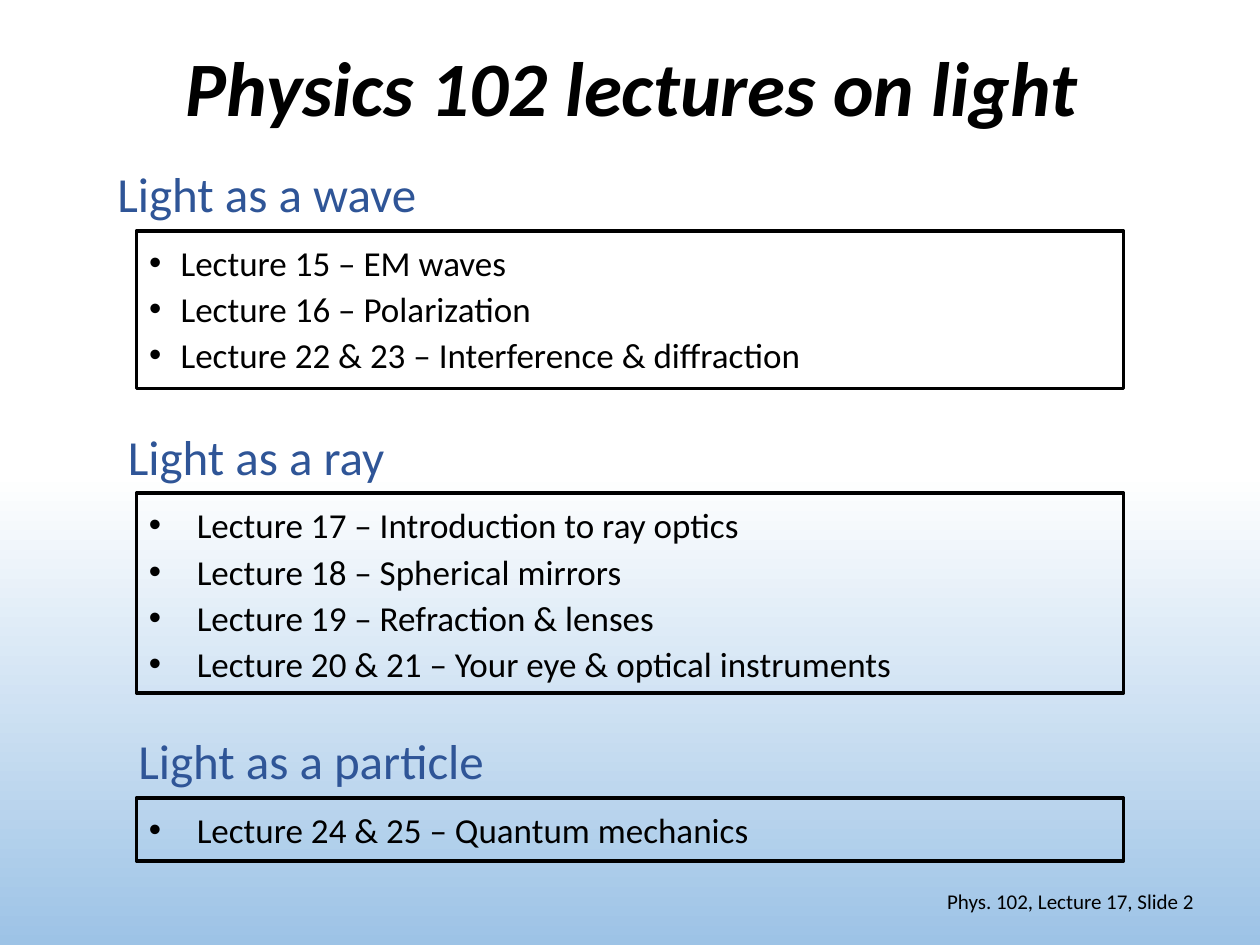
from dataclasses import dataclass

from lxml.etree import SubElement
from pptx import Presentation
from pptx.dml.color import RGBColor
from pptx.enum.shapes import MSO_SHAPE
from pptx.enum.text import MSO_ANCHOR, MSO_AUTO_SIZE, PP_ALIGN
from pptx.oxml.ns import qn
from pptx.util import Inches, Pt

BLACK = RGBColor(0x00, 0x00, 0x00)
WHITE = RGBColor(0xFF, 0xFF, 0xFF)
SKY = RGBColor(0x9D, 0xC3, 0xE6)
HEADING_BLUE = RGBColor(0x2F, 0x55, 0x97)
FONT = "Calibri"

WIDTH, HEIGHT = Inches(10), Inches(7.5)
COLUMNS, ROWS = 120, 90
LIST_LEFT, LIST_WIDTH = 13, 94
HEADING_RISE, HEADING_HEIGHT = 7, 6.8


@dataclass(frozen=True)
class Topic:
    heading: str
    heading_left: float
    heading_width: float
    list_top: float
    list_height: float
    indent: float
    lectures: tuple[str, ...]


TOPICS = (
    Topic("Light as a wave", 10, 31.2, 22, 15, 0.25, (
        "Lecture 15 – EM waves",
        "Lecture 16 – Polarization",
        "Lecture 22 & 23 – Interference & diffraction",
    )),
    Topic("Light as a ray", 11, 27.1, 47, 19, 0.38, (
        "Lecture 17 – Introduction to ray optics",
        "Lecture 18 – Spherical mirrors",
        "Lecture 19 – Refraction & lenses",
        "Lecture 20 & 21 – Your eye & optical instruments",
    )),
    Topic("Light as a particle", 12, 35.8, 76, 6, 0.38, (
        "Lecture 24 & 25 – Quantum mechanics",
    )),
)


def grid(left: float, top: float, width: float, height: float) -> tuple[int, ...]:
    """Turn columns and rows into slide lengths."""
    column, row = WIDTH / COLUMNS, HEIGHT / ROWS
    return (round(left * column), round(top * row),
            round(width * column), round(height * row))


def place(shape, *cells: float) -> None:
    shape.left, shape.top, shape.width, shape.height = grid(*cells)


def add_span(para, text: str, size: float, color: RGBColor = BLACK):
    span = para.add_run()
    span.text = text
    span.font.name = FONT
    span.font.size = Pt(size)
    span.font.color.rgb = color
    return span


def add_bullet(para, indent: float) -> None:
    properties = para._p.get_or_add_pPr()
    properties.set("marL", str(Inches(indent)))
    properties.set("indent", str(-Inches(indent)))
    SubElement(properties, qn("a:buFont"), typeface="Arial")
    SubElement(properties, qn("a:buChar"), char="•")


def paint_background(page) -> None:
    fill = page.background.fill
    fill.gradient()
    fill.gradient_angle = 270
    for stop, position, color in zip(fill.gradient_stops, (0.5, 1), (WHITE, SKY)):
        stop.position = position
        stop.color.rgb = color


def write_title(title, text: str) -> None:
    place(title, 8.5, 0, 103.4, 17.4)
    title.text_frame.vertical_anchor = MSO_ANCHOR.MIDDLE
    para = title.text_frame.paragraphs[0]
    para.alignment = PP_ALIGN.CENTER
    para.line_spacing = 0.9
    span = add_span(para, text, 44)
    span.font.bold = span.font.italic = True


def add_list_box(page):
    box = page.shapes.add_shape(MSO_SHAPE.RECTANGLE, 0, 0, 0, 0)
    box.shadow.inherit = False
    return box


def fill_list_box(box, topic: Topic) -> None:
    place(box, LIST_LEFT, topic.list_top, LIST_WIDTH, topic.list_height)
    box.fill.background()
    box.line.color.rgb = BLACK
    box.line.width = Pt(2.25)
    frame = box.text_frame
    frame.word_wrap = True
    frame.auto_size = MSO_AUTO_SIZE.NONE
    frame.vertical_anchor = MSO_ANCHOR.TOP
    for index, lecture in enumerate(topic.lectures):
        para = frame.add_paragraph() if index else frame.paragraphs[0]
        para.alignment = PP_ALIGN.LEFT
        para.line_spacing = 1.1
        para.space_before = Pt(0)
        add_bullet(para, topic.indent)
        add_span(para, lecture, 20)


def add_heading(page, topic: Topic) -> None:
    box = page.shapes.add_textbox(*grid(
        topic.heading_left, topic.list_top - HEADING_RISE,
        topic.heading_width, HEADING_HEIGHT))
    box.text_frame.word_wrap = False
    box.text_frame.auto_size = MSO_AUTO_SIZE.SHAPE_TO_FIT_TEXT
    add_span(box.text_frame.paragraphs[0], topic.heading, 28, HEADING_BLUE)


def add_footer(page, text: str) -> None:
    box = page.shapes.add_textbox(*grid(84.7, 83.4, 30.2, 4.8))
    box.text_frame.word_wrap = True
    box.text_frame.vertical_anchor = MSO_ANCHOR.MIDDLE
    para = box.text_frame.paragraphs[0]
    para.alignment = PP_ALIGN.RIGHT
    add_span(para, text, 12)


def main() -> None:
    deck = Presentation()
    deck.slide_width, deck.slide_height = WIDTH, HEIGHT
    page = deck.slides.add_slide(deck.slide_layouts[1])
    paint_background(page)
    write_title(page.shapes.title, "Physics 102 lectures on light")
    for index, topic in enumerate(TOPICS):
        box = add_list_box(page) if index else page.placeholders[1]
        fill_list_box(box, topic)
        add_heading(page, topic)
    add_footer(page, "Phys. 102, Lecture 17, Slide 2")
    deck.save("out.pptx")


if __name__ == "__main__":
    main()
